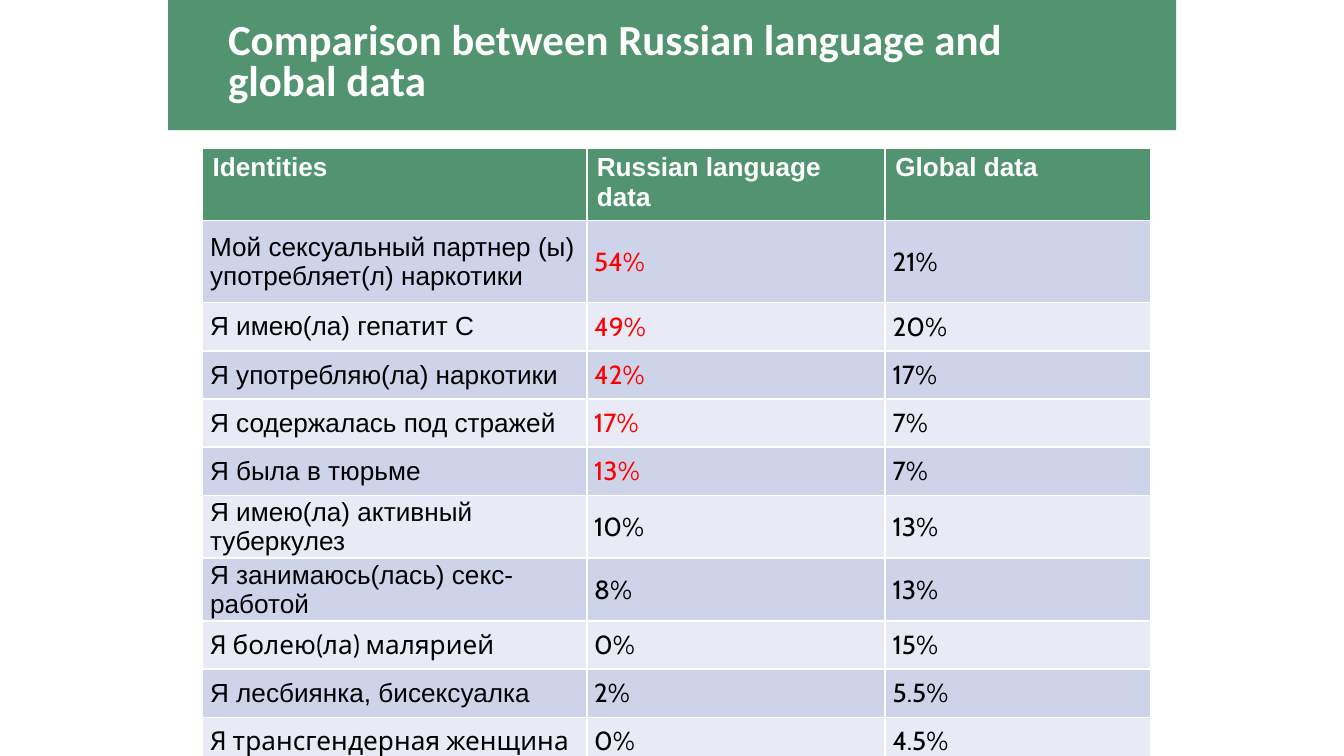
"""Build a slide comparing Russian language data with global data."""
import dataclasses

import pptx
import pptx.dml.color
import pptx.enum.shapes
import pptx.enum.text
import pptx.util

Cm = pptx.util.Cm
Pt = pptx.util.Pt
MIDDLE = pptx.enum.text.MSO_ANCHOR.MIDDLE
TOP = pptx.enum.text.MSO_ANCHOR.TOP


@dataclasses.dataclass(frozen=True)
class Theme:
    green: str = "51946F"
    bands: tuple = ("CDD4EA", "E8EBF5")
    white: str = "FFFFFF"
    black: str = "000000"
    red: str = "FF0000"
    title: int = 23
    body: int = 14
    head: str = "Calibri"
    plain: str = "Arial"
    round: str = "Cabin"


THEME = Theme()
HEADS = ("Identities", "Russian language data", "Global data")
ROWS = (
    ("Мой сексуальный партнер (ы) употребляет(л) наркотики", "54%", "21%"),
    ("Я имею(ла) гепатит С", "49%", "20%"),
    ("Я употребляю(ла) наркотики", "42%", "17%"),
    ("Я содержалась под стражей", "17%", "7%"),
    ("Я была в тюрьме", "13%", "7%"),
    ("Я имею(ла) активный туберкулез", "10%", "13%"),
    ("Я занимаюсь(лась) секс-работой", "8%", "13%"),
    ("Я болею(ла) малярией", "0%", "15%"),
    ("Я лесбиянка, бисексуалка", "2%", "5.5%"),
    ("Я трансгендерная женщина", "0%", "4.5%"),
)
ROUND_NAMES = (8, 10)
RED_ROWS = range(1, 6)
WIDTHS = (7.26, 5.64, 5.02)
HEIGHTS = (1.04, 1.55) + (0.91,) * 9


def color(code):
    return pptx.dml.color.RGBColor.from_string(code)


def style(para, face, size, code, bold=False):
    font = para.font
    font.name, font.size, font.bold = face, Pt(size), bold
    font.color.rgb = color(code)


def inset(item, side, edge):
    item.margin_left = item.margin_right = Cm(side)
    item.margin_top = item.margin_bottom = Cm(edge)


def add_band(slide):
    band = slide.shapes.add_shape(
        pptx.enum.shapes.MSO_SHAPE.RECTANGLE, Cm(3.18), Cm(0), Cm(19.05), Cm(2.46))
    band.shadow.inherit = False
    band.fill.solid()
    band.fill.fore_color.rgb = color(THEME.green)
    band.line.fill.background()


def add_title(slide, text):
    box = slide.shapes.add_textbox(Cm(4.13), Cm(0.26), Cm(17.15), Cm(1.88))
    frame = box.text_frame
    frame.word_wrap = True
    frame.vertical_anchor = MIDDLE
    inset(frame, 0.18, 0.1)
    para = frame.paragraphs[0]
    para.text = text
    para.line_spacing = 0.8
    style(para, THEME.head, THEME.title, THEME.white, True)


def fill_cell(cell, text, row, col):
    top = row == 0
    cell.fill.solid()
    cell.fill.fore_color.rgb = color(
        THEME.green if top else THEME.bands[(row - 1) % 2])
    cell.vertical_anchor = TOP if top else MIDDLE
    inset(cell, 0.19 if top else 0.14, 0.09 if top else 0)
    para = cell.text_frame.paragraphs[0]
    para.text = text
    if top:
        style(para, THEME.plain, THEME.body, THEME.white, True)
    else:
        face = THEME.round if col or row in ROUND_NAMES else THEME.plain
        code = THEME.red if col == 1 and row in RED_ROWS else THEME.black
        style(para, face, THEME.body, code)


def add_grid(slide):
    data = (HEADS,) + ROWS
    grid = slide.shapes.add_table(
        len(data), len(HEADS), Cm(3.83), Cm(2.8),
        Cm(sum(WIDTHS)), Cm(sum(HEIGHTS))).table
    for column, width in zip(grid.columns, WIDTHS):
        column.width = Cm(width)
    for row, (texts, height) in enumerate(zip(data, HEIGHTS)):
        grid.rows[row].height = Cm(height)
        for col, text in enumerate(texts):
            fill_cell(grid.cell(row, col), text, row, col)


def main():
    deck = pptx.Presentation()
    deck.slide_width, deck.slide_height = Cm(25.4), Cm(14.28)
    slide = deck.slides.add_slide(deck.slide_layouts[6])
    add_band(slide)
    add_title(slide, "Comparison between Russian language and global data")
    add_grid(slide)
    deck.save("out.pptx")


if __name__ == "__main__":
    main()
